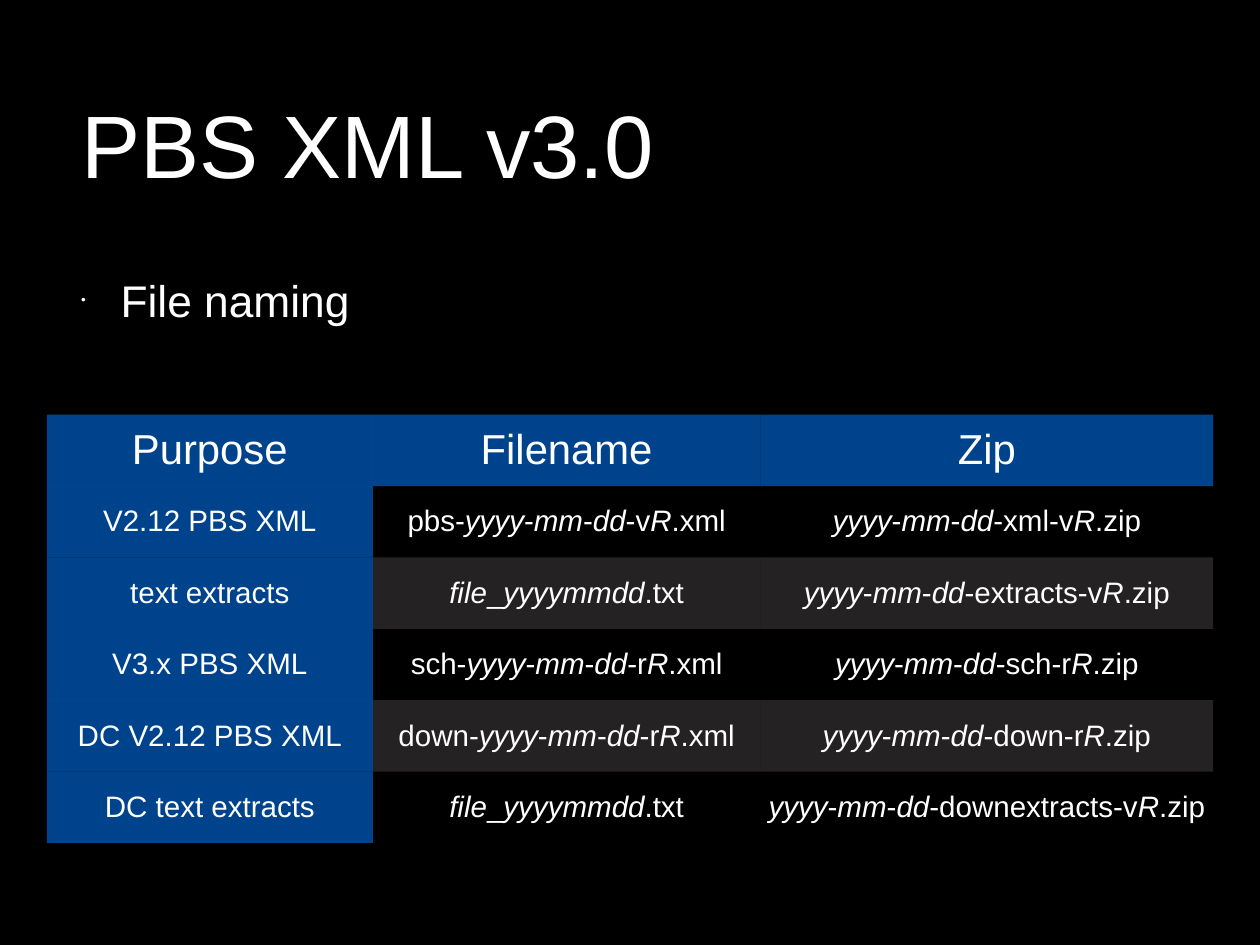
from lxml.etree import SubElement
from pptx import Presentation
from pptx.dml.color import RGBColor
from pptx.enum.text import MSO_ANCHOR, MSO_AUTO_SIZE, PP_ALIGN
from pptx.oxml.ns import qn
from pptx.util import Pt

BLACK = RGBColor(0x00, 0x00, 0x00)
WHITE = RGBColor(0xFF, 0xFF, 0xFF)
BLUE = RGBColor(0x00, 0x71, 0xEB)
GREY = RGBColor(0x67, 0x61, 0x64)
NO_STYLE_NO_GRID = "{2D5ABB26-0587-4C30-8999-92F81FD0307C}"
INSETS = {f"margin_{side}": Pt(4) for side in ("left", "top", "right", "bottom")}

# Asterisks switch italics on and off
DATE = "*yyyy*-*mm*-*dd*"
ROWS = [
    ("Purpose", "Filename", "Zip"),
    ("V2.12 PBS XML", f"pbs-{DATE}-v*R*.xml", f"{DATE}-xml-v*R*.zip"),
    ("text extracts", "*file*_*yyyymmdd*.txt", f"{DATE}-extracts-v*R*.zip"),
    ("V3.x PBS XML", f"sch-{DATE}-r*R*.xml", f"{DATE}-sch-r*R*.zip"),
    ("DC V2.12 PBS XML", f"down-{DATE}-r*R*.xml", f"{DATE}-down-r*R*.zip"),
    ("DC text extracts", "*file*_*yyyymmdd*.txt", f"{DATE}-downextracts-v*R*.zip"),
]
COLUMN_WIDTHS = (265, 315, 368)
ROW_HEIGHT = 58


def write(para, marked_text, size):
    for index, piece in enumerate(marked_text.split("*")):
        if piece:
            span = para.add_run()
            span.text = piece
            span.font.name = "Arial"
            span.font.size = Pt(size)
            span.font.italic = index % 2 == 1
            span.font.color.rgb = WHITE


def fill_cell(cell, color, opacity):
    cell.fill.solid()
    cell.fill.fore_color.rgb = color
    color_element = cell._tc.tcPr.find(f"{qn('a:solidFill')}/{qn('a:srgbClr')}")
    SubElement(color_element, qn("a:alpha"), val=str(opacity * 1000))


deck = Presentation()
deck.slide_width, deck.slide_height = Pt(1024), Pt(768)
page = deck.slides.add_slide(deck.slide_layouts[1])
page.background.fill.solid()
page.background.fill.fore_color.rgb = BLACK

# Title and body
title, body = page.shapes.title, page.placeholders[1]
for box, top, height, anchor in (
    (title, 20, 192, MSO_ANCHOR.MIDDLE),
    (body, 218, 450, MSO_ANCHOR.TOP),
):
    box.left, box.top, box.width, box.height = Pt(62), Pt(top), Pt(900), Pt(height)
    frame_format = {
        **INSETS,
        "vertical_anchor": anchor,
        "word_wrap": True,
        "auto_size": MSO_AUTO_SIZE.NONE,
    }
    for name, value in frame_format.items():
        setattr(box.text_frame, name, value)
    para = box.text_frame.paragraphs[0]
    para.alignment = PP_ALIGN.LEFT
    para.space_before = Pt(0)

write(title.text_frame.paragraphs[0], "PBS XML v3.0", 72)

# Small bullet with a hanging indent
item = body.text_frame.paragraphs[0]
properties = item._p.get_or_add_pPr()
properties.set("marL", str(Pt(32)))
properties.set("indent", str(-Pt(32)))
SubElement(properties, qn("a:buSzPct"), val="30000")
SubElement(properties, qn("a:buChar"), char="•")
write(item, "File naming", 36)

# File naming table
table_frame = page.shapes.add_table(
    len(ROWS), len(COLUMN_WIDTHS), Pt(38), Pt(337),
    Pt(sum(COLUMN_WIDTHS)), Pt(ROW_HEIGHT * len(ROWS)),
)
table = table_frame.table
table.first_row = table.horz_banding = False
table._tbl.tblPr.find(qn("a:tableStyleId")).text = NO_STYLE_NO_GRID
for column, width in zip(table.columns, COLUMN_WIDTHS):
    column.width = Pt(width)

for row_index, texts in enumerate(ROWS):
    table.rows[row_index].height = Pt(ROW_HEIGHT)
    for column_index, text in enumerate(texts):
        cell = table.cell(row_index, column_index)
        for name, value in {**INSETS, "vertical_anchor": MSO_ANCHOR.MIDDLE}.items():
            setattr(cell, name, value)
        para = cell.text_frame.paragraphs[0]
        para.alignment = PP_ALIGN.CENTER
        write(para, text, 34 if row_index == 0 else 24)
        if row_index == 0 or column_index == 0:
            fill_cell(cell, BLUE, 60)
        elif row_index % 2 == 0:
            fill_cell(cell, GREY, 36)
        else:
            cell.fill.background()

deck.save("out.pptx")
